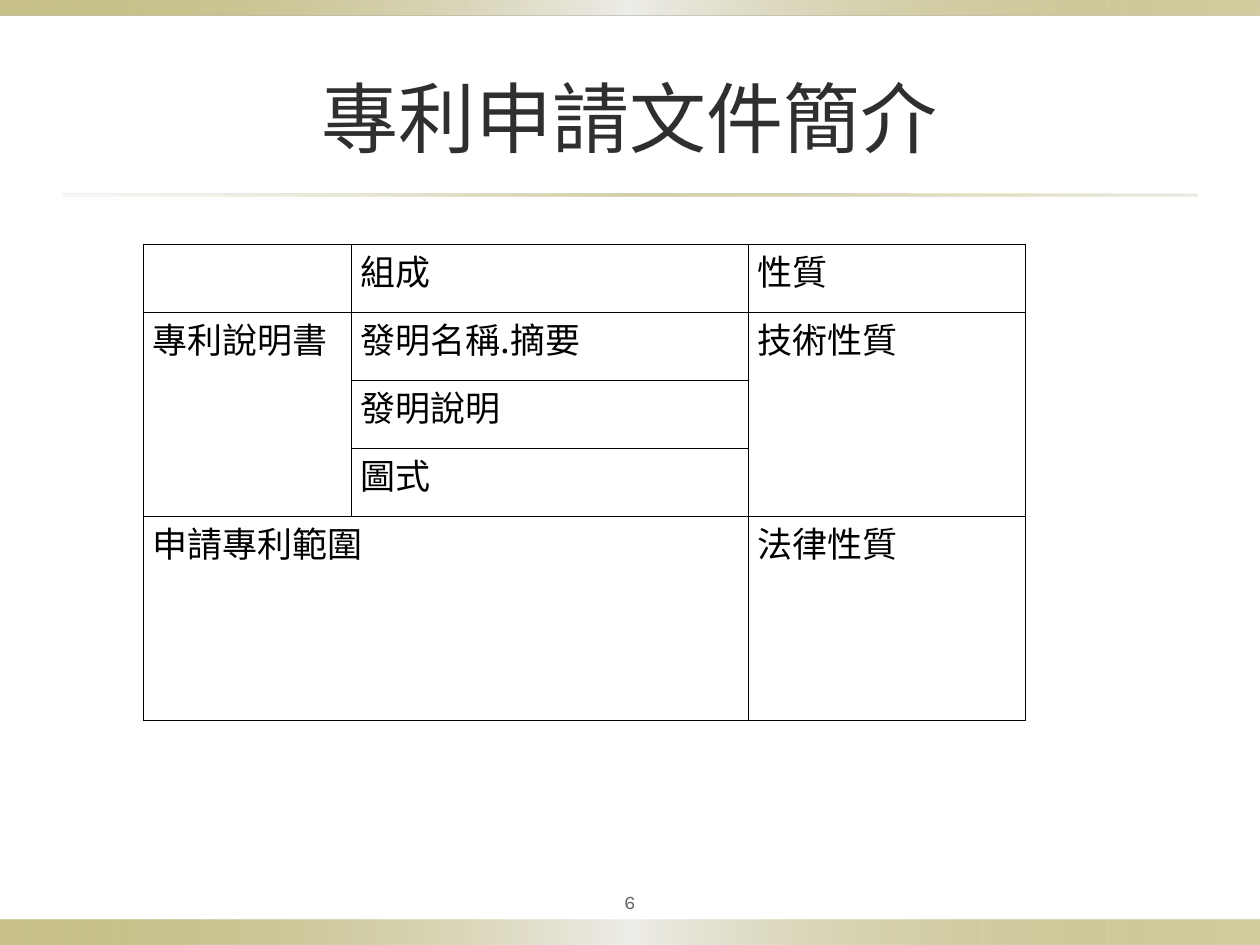
from lxml import etree
from pptx import Presentation
from pptx.dml.color import RGBColor
from pptx.enum.shapes import MSO_SHAPE as Shape
from pptx.enum.text import MSO_ANCHOR as Anchor, PP_ALIGN as Align
from pptx.oxml.ns import qn
from pptx.util import Inches, Pt

LATIN_FONT = "Karla"
CHINESE_FONT = "Noto Sans CJK TC"
BAR_STOPS = [(0, "918415", 50), (50, "EEEDE8", 100), (100, "918415", 40)]
RULE_STOPS = [(0, "DCD9CC", 20), (50, "918415", 40), (100, "DCD9CC", 50)]

COLUMN_WIDTHS = [1.65, 3.15, 2.2]
ROW_HEIGHTS = [0.54, 0.54, 0.54, 0.54, 1.62]
ROWS = [
    ["", "組成", "性質"],
    ["專利說明書", "發明名稱.摘要", "技術性質"],
    ["", "發明說明", ""],
    ["", "圖式", ""],
    ["申請專利範圍", "", "法律性質"],
]
MERGES = [((1, 0), (3, 0)), ((1, 2), (3, 2)), ((4, 0), (4, 1))]


def color(value):
    return RGBColor.from_string(value)


def set_attributes(target, values):
    for name, value in values.items():
        setattr(target, name, value)


def add_color(parent, value, opacity=100):
    element = etree.SubElement(parent, qn("a:srgbClr"), val=value)
    if opacity < 100:
        etree.SubElement(element, qn("a:alpha"), val=str(opacity * 1000))


def write_text(frame, text, size, font_color, font_name, align):
    paragraph = frame.paragraphs[0]
    paragraph.alignment = align
    run = paragraph.add_run()
    run.text = text
    set_attributes(run.font, {"size": Pt(size), "name": font_name, "bold": False})
    run.font.color.rgb = color(font_color)
    properties = run.font._element
    etree.SubElement(properties, qn("a:ea"), typeface=CHINESE_FONT)


def add_gradient_bar(slide, box, stops):
    shape = slide.shapes.add_shape(Shape.RECTANGLE, *map(Inches, box))
    shape.shadow.inherit = False
    shape.line.fill.background()
    shape.fill.gradient()
    shape.fill.gradient_angle = 0
    stop_list = shape._element.spPr.find(".//" + qn("a:gsLst"))
    for stop in list(stop_list):
        stop_list.remove(stop)
    for position, value, opacity in stops:
        stop = etree.SubElement(stop_list, qn("a:gs"), pos=str(position * 1000))
        add_color(stop, value, opacity)


def add_title(slide, box, text):
    title = slide.shapes.title
    set_attributes(title, dict(zip(("left", "top", "width", "height"), map(Inches, box))))
    title.text_frame.vertical_anchor = Anchor.MIDDLE
    write_text(title.text_frame, text, 44, "2F2F2F", LATIN_FONT, Align.CENTER)


def add_page_number(slide, box, number):
    frame = slide.shapes.add_textbox(*map(Inches, box)).text_frame
    margins = ("margin_left", "margin_top", "margin_right", "margin_bottom")
    set_attributes(frame, dict.fromkeys(margins, Inches(0.05)))
    set_attributes(frame, {"word_wrap": True, "vertical_anchor": Anchor.MIDDLE})
    write_text(frame, number, 11, "636363", LATIN_FONT, Align.CENTER)


def format_cell(cell):
    set_attributes(cell, {
        "margin_left": Inches(0.07), "margin_right": Inches(0.07),
        "margin_top": 0, "margin_bottom": 0, "vertical_anchor": Anchor.TOP,
    })
    properties = cell._tc.get_or_add_tcPr()
    for side in ("lnL", "lnR", "lnT", "lnB"):
        line = etree.SubElement(properties, qn("a:" + side), w=str(Pt(1)))
        add_color(etree.SubElement(line, qn("a:solidFill")), "000000")
    cell.fill.background()


def add_document_table(slide, box):
    frame = slide.shapes.add_table(len(ROWS), len(COLUMN_WIDTHS), *map(Inches, box))
    table = frame.table
    set_attributes(table, {"first_row": False, "horz_banding": False})
    for column, width in zip(table.columns, COLUMN_WIDTHS):
        column.width = Inches(width)
    for row, height, texts in zip(table.rows, ROW_HEIGHTS, ROWS):
        row.height = Inches(height)
        for cell, text in zip(row.cells, texts):
            format_cell(cell)
            if text:
                write_text(cell.text_frame, text, 20, "000000", CHINESE_FONT, Align.LEFT)
    for first, last in MERGES:
        table.cell(*first).merge(table.cell(*last))


def main():
    presentation = Presentation()
    set_attributes(presentation, {"slide_width": Inches(10), "slide_height": Inches(7.5)})
    slide = presentation.slides.add_slide(presentation.slide_layouts[5])
    add_gradient_bar(slide, (0, 7.3, 10, 0.2), BAR_STOPS)
    add_gradient_bar(slide, (0, 0, 10, 0.12), BAR_STOPS)
    add_gradient_bar(slide, (0.5, 1.54, 9, 0.02), RULE_STOPS)
    add_title(slide, (0.5, 0.3, 9, 1.25), "專利申請文件簡介")
    add_page_number(slide, (4.5, 7, 1, 0.31), "6")
    add_document_table(slide, (1.14, 1.94, 7, 3.78))
    presentation.save("out.pptx")


if __name__ == "__main__":
    main()
